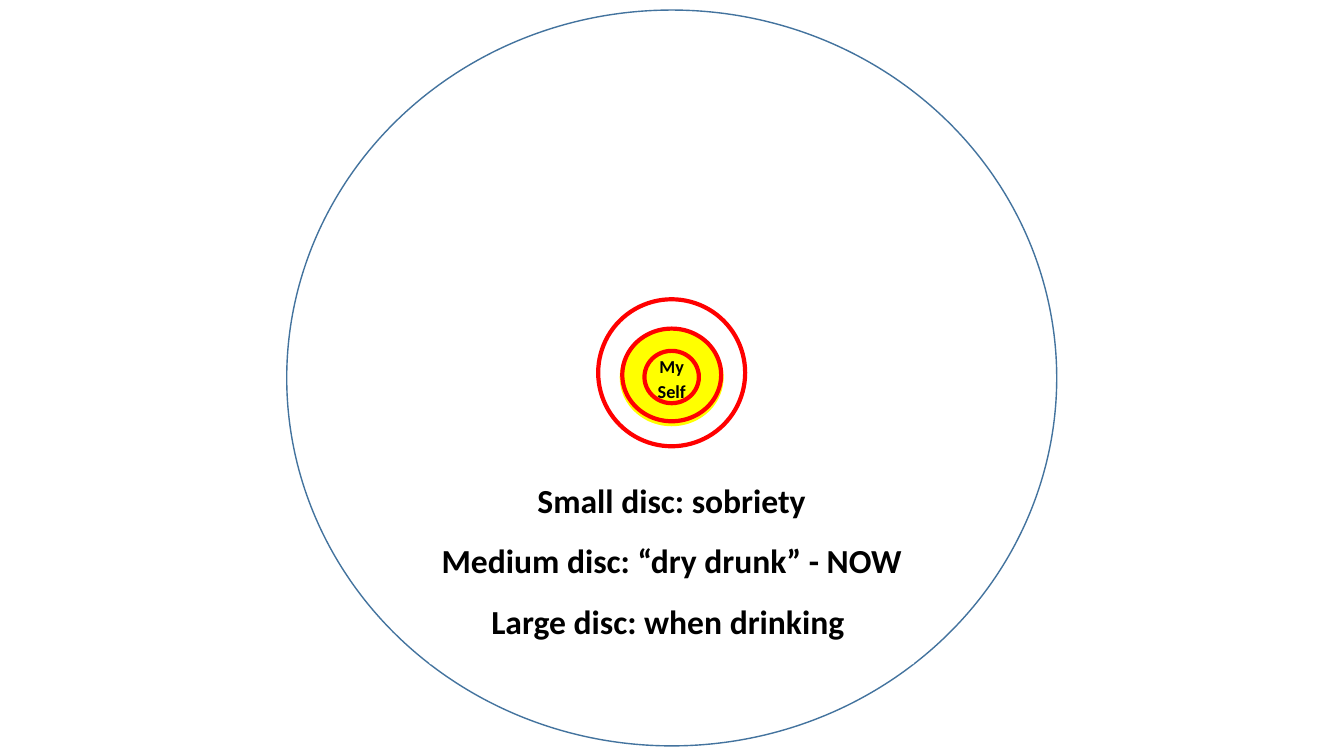
"""Draw nested discs around the self, with a legend beneath."""
from dataclasses import dataclass

import pptx
import pptx.dml.color
import pptx.enum.shapes
import pptx.enum.text
import pptx.util

Pt = pptx.util.Pt
KIND = pptx.enum.shapes.MSO_SHAPE
ANCHOR = pptx.enum.text.MSO_ANCHOR
MID = 479.8


@dataclass
class Item:
    top: float
    width: float
    height: float
    fill: str = ""
    line: str = ""
    weight: float = 3
    kind: int = KIND.OVAL
    anchor: int = ANCHOR.MIDDLE
    size: float = 13
    text: tuple[tuple[str, ...], ...] = ()


ITEMS = [
    Item(7.2, 550, 525.6, line="43739E", weight=1),
    Item(213.8, 105, 105, line="FF0000"),
    Item(234.7, 74.2, 69.8, fill="FFFF00", text=(("My", "Self"),)),
    Item(334.8, 345.6, 139.7, fill="FFFFFF", kind=KIND.RECTANGLE,
         anchor=ANCHOR.TOP, size=24,
         text=(("Small disc: sobriety",),
               ("Medium disc: “dry drunk” - NOW",),
               ("Large disc: when drinking ",))),
    Item(234.7, 70.6, 66.2, line="FF0000"),
    Item(250.6, 38.9, 37.4, line="FF0000"),
]


def tint(code: str) -> pptx.dml.color.RGBColor:
    return pptx.dml.color.RGBColor.from_string(code)


def write(frame, item: Item) -> None:
    frame.word_wrap = True
    frame.vertical_anchor = item.anchor
    for row, parts in enumerate(item.text):
        para = frame.add_paragraph() if row else frame.paragraphs[0]
        para.alignment = pptx.enum.text.PP_ALIGN.CENTER
        para.line_spacing = 1.15
        para.space_after = Pt(10)
        for spot, part in enumerate(parts):
            if spot:
                para.add_line_break()
            run = para.add_run()
            run.text = part
            run.font.name = "Calibri"
            run.font.size = Pt(item.size)
            run.font.bold = True
            run.font.color.rgb = tint("000000")


def draw(slide, item: Item) -> None:
    shape = slide.shapes.add_shape(
        item.kind, Pt(MID - item.width / 2), Pt(item.top),
        Pt(item.width), Pt(item.height))
    shape.shadow.inherit = False
    if item.fill:
        shape.fill.solid()
        shape.fill.fore_color.rgb = tint(item.fill)
    else:
        shape.fill.background()
    if item.line:
        shape.line.color.rgb = tint(item.line)
        shape.line.width = Pt(item.weight)
    else:
        shape.line.fill.background()
    if item.text:
        write(shape.text_frame, item)


def main() -> None:
    deck = pptx.Presentation()
    deck.slide_width, deck.slide_height = Pt(960), Pt(540)
    slide = deck.slides.add_slide(deck.slide_layouts[6])
    for item in ITEMS:
        draw(slide, item)
    deck.save("out.pptx")


if __name__ == "__main__":
    main()
